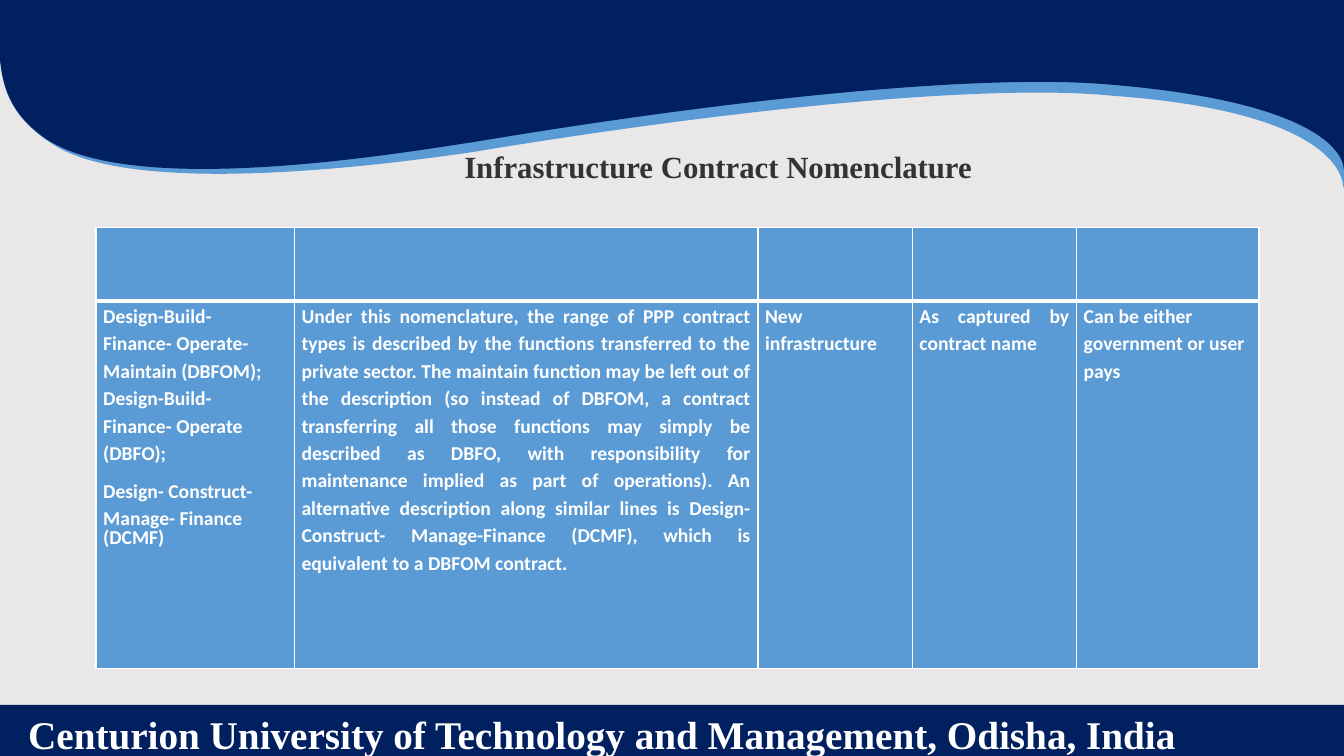
from lxml import etree
from pptx import Presentation
from pptx.dml.color import RGBColor
from pptx.enum.shapes import MSO_SHAPE
from pptx.enum.text import MSO_ANCHOR, MSO_AUTO_SIZE, PP_ALIGN
from pptx.oxml.ns import qn
from pptx.util import Cm, Pt

LEFT, JUSTIFY = PP_ALIGN.LEFT, PP_ALIGN.JUSTIFY
TOP, MIDDLE = MSO_ANCHOR.TOP, MSO_ANCHOR.MIDDLE
NO_FIT = MSO_AUTO_SIZE.NONE
RECTANGLE = MSO_SHAPE.RECTANGLE

NAVY, BLUE, WHITE, GREY, CHARCOAL = "002060", "5B9BD5", "FFFFFF", "E9E7E7", "333333"
SERIF, SANS = "Times New Roman", "Calibri"
SLIDE_WIDTH, SLIDE_HEIGHT = 33.87, 19.05

LIGHT_WAVE = [
    (0, 0.25),
    (-0.03, 1.68), (-0.13, 2.72), (1.37, 3.66),
    (3.51, 5), (9.98, 4.11), (11.86, 3.84),
    (19.25, 2.62), (25.17, 2.13), (27.99, 2.41),
    (34.93, 2.9), (33.68, 5.31), (33.87, 4.67),
]
DARK_WAVE = [
    (0, 0),
    (-0.08, 1.65), (-0.03, 2.59), (1.02, 3.4),
    (3.12, 5.05), (10.06, 3.86), (11.94, 3.58),
    (19.35, 2.34), (25.12, 1.88), (27.94, 2.13),
    (34.82, 2.69), (33.73, 4.72), (33.87, 4.19),
]

COLUMN_WIDTHS = [5, 11.68, 3.89, 4.14, 4.6]
ROW_HEIGHTS = [1.85, 9.25]
CONTRACT = [
    (["Design-Build- Finance- Operate- Maintain (DBFOM);",
      "Design-Build- Finance- Operate (DBFO);",
      "Design- Construct- Manage- Finance",
      "(DCMF)"], LEFT, 0.6),
    (["Under this nomenclature, the range of PPP contract types is described by the "
      "functions transferred to the private sector. The maintain function may be left "
      "out of the description (so instead of DBFOM, a contract transferring all those "
      "functions may simply be described as DBFO, with responsibility for maintenance "
      "implied as part of operations). An alternative description along similar lines "
      "is Design-Construct- Manage-Finance (DCMF), which is equivalent to a DBFOM "
      "contract."], JUSTIFY, 0.18),
    (["New infrastructure"], LEFT, 0.18),
    (["As captured by contract name"], JUSTIFY, 0.18),
    (["Can be either government or user pays"], LEFT, 0.18),
]


def rgb(code):
    """Turn a hex string into a colour."""
    return RGBColor.from_string(code)


def paint(shape, color):
    """Fill a shape plainly, without outline or shadow."""
    shape.shadow.inherit = False
    shape.fill.solid()
    shape.fill.fore_color.rgb = rgb(color)
    shape.line.fill.background()


def style_runs(paragraph, font_name, size, color):
    """Format every run of a paragraph in bold."""
    for run in paragraph.runs:
        run.font.name = font_name
        run.font.size = Pt(size)
        run.font.bold = True
        run.font.color.rgb = rgb(color)


def add_wave(slide, curve, color):
    """Draw a header wave whose lower edge is a chain of cubic curves."""
    top = curve[0][1]
    corners = curve[3::3] + [(SLIDE_WIDTH, top)]
    builder = slide.shapes.build_freeform(Cm(0), Cm(top), scale=1.0)
    builder.add_line_segments([(Cm(x), Cm(y)) for x, y in corners], close=True)
    wave = builder.convert_to_shape()
    segments = list(wave._element.iter(qn("a:lnTo")))
    for index, segment in enumerate(segments[:len(curve) // 3]):
        bend = etree.Element(qn("a:cubicBezTo"))
        for x, y in curve[3 * index + 1:3 * index + 4]:
            etree.SubElement(bend, qn("a:pt"), x=str(Cm(x)), y=str(Cm(y - top)))
        segment.getparent().replace(segment, bend)
    paint(wave, color)


def add_footer(slide, left, top, width, height):
    """Draw the footer band with the university's name."""
    band = slide.shapes.add_shape(RECTANGLE, Cm(left), Cm(top), Cm(width), Cm(height))
    paint(band, NAVY)
    frame = band.text_frame
    frame.text = "Centurion University of Technology and Management, Odisha, India"
    frame.margin_left = Cm(0.71)
    frame.vertical_anchor = MIDDLE
    frame.paragraphs[0].alignment = LEFT
    style_runs(frame.paragraphs[0], SERIF, 28, WHITE)


def add_heading(slide, left, top, width, height):
    """Place the title placeholder in front of the waves."""
    heading = slide.shapes.title
    slide.shapes._spTree.append(heading._element)
    heading.left, heading.top = Cm(left), Cm(top)
    heading.width, heading.height = Cm(width), Cm(height)
    frame = heading.text_frame
    frame.text = "Infrastructure Contract Nomenclature"
    frame.auto_size = NO_FIT
    frame.vertical_anchor = TOP
    frame.margin_left = Cm(0.71)
    frame.paragraphs[0].alignment = LEFT
    style_runs(frame.paragraphs[0], SERIF, 22, CHARCOAL)


def set_borders(cell, top, bottom):
    """Give a cell white borders of the given top and bottom widths."""
    properties = cell._tc.get_or_add_tcPr()
    widths = {"a:lnL": 1, "a:lnR": 1, "a:lnT": top, "a:lnB": bottom}
    for position, (side, width) in enumerate(widths.items()):
        line = etree.Element(qn(side), w=str(Pt(width)))
        fill = etree.SubElement(line, qn("a:solidFill"))
        etree.SubElement(fill, qn("a:srgbClr"), val=WHITE)
        properties.insert(position, line)


def fill_contract_cell(cell, lines, alignment, right_margin):
    """Write the paragraphs of one contract cell."""
    cell.margin_left = cell.margin_top = cell.margin_bottom = 0
    cell.margin_right = Cm(right_margin)
    cell.text_frame.text = "\n".join(lines)
    for paragraph, line in zip(cell.text_frame.paragraphs, lines):
        paragraph._p.get_or_add_pPr().set("marL", str(Cm(0.18)))
        paragraph.alignment = alignment
        paragraph.line_spacing = Pt(13.5) if line == "(DCMF)" else 1.15
        if line.startswith("Design- Construct"):
            paragraph.space_before = Pt(7.2)
        style_runs(paragraph, SANS, 14, WHITE)


def add_contract_table(slide, left, top):
    """Build the contract table below an empty header row."""
    table = slide.shapes.add_table(
        len(ROW_HEIGHTS), len(COLUMN_WIDTHS), Cm(left), Cm(top),
        Cm(sum(COLUMN_WIDTHS)), Cm(sum(ROW_HEIGHTS))).table
    for column, width in zip(table.columns, COLUMN_WIDTHS):
        column.width = Cm(width)
    for row, height in zip(table.rows, ROW_HEIGHTS):
        row.height = Cm(height)
    for cell in table.iter_cells():
        cell.fill.solid()
        cell.fill.fore_color.rgb = rgb(BLUE)
    for index, contract in enumerate(CONTRACT):
        set_borders(table.cell(0, index), 1, 3)
        set_borders(table.cell(1, index), 3, 1)
        fill_contract_cell(table.cell(1, index), *contract)


def add_nomenclature_slide(presentation):
    """Assemble the nomenclature slide."""
    slide = presentation.slides.add_slide(presentation.slide_layouts[5])
    slide.background.fill.solid()
    slide.background.fill.fore_color.rgb = rgb(GREY)
    add_wave(slide, LIGHT_WAVE, BLUE)
    add_wave(slide, DARK_WAVE, NAVY)
    add_footer(slide, 0, 17.76, SLIDE_WIDTH, 1.45)
    add_heading(slide, 10.99, 3.59, 17, 1.2)
    add_contract_table(slide, 2.42, 5.74)


def main():
    """Create and save the presentation."""
    presentation = Presentation()
    presentation.slide_width = Cm(SLIDE_WIDTH)
    presentation.slide_height = Cm(SLIDE_HEIGHT)
    add_nomenclature_slide(presentation)
    presentation.save("out.pptx")


if __name__ == "__main__":
    main()
